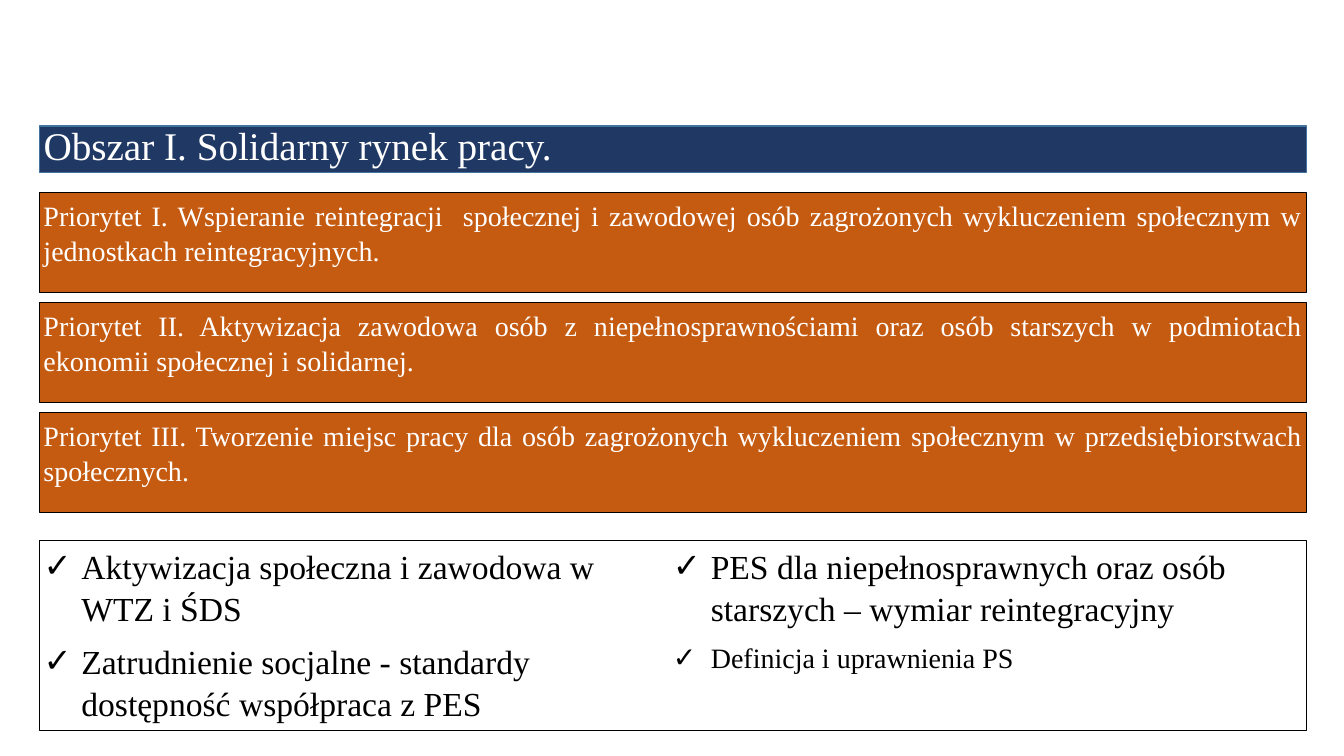
import pptx
import pptx.util
import pptx.dml.color
import pptx.enum.shapes
import pptx.enum.text
import pptx.oxml.ns
import lxml.etree

Pt = pptx.util.Pt
FONT = "Times New Roman"
LEFT, WIDTH = 28.2, 905
INSET = 2.9
INDENT = 27

AREA = "Obszar I. Solidarny rynek pracy."
PRIORITIES = [
    "Priorytet I. Wspieranie reintegracji  społecznej i zawodowej osób "
    "zagrożonych wykluczeniem społecznym w jednostkach reintegracyjnych.",
    "Priorytet II. Aktywizacja zawodowa osób z niepełnosprawnościami oraz "
    "osób starszych w podmiotach ekonomii społecznej i solidarnej.",
    "Priorytet III. Tworzenie miejsc pracy dla osób zagrożonych "
    "wykluczeniem społecznym w przedsiębiorstwach społecznych.",
]
ACTIONS = [
    ("Aktywizacja społeczna i zawodowa w WTZ i ŚDS", 24),
    ("Zatrudnienie socjalne - standardy dostępność współpraca z PES", 24),
    ("PES dla niepełnosprawnych oraz osób starszych – wymiar reintegracyjny", 24),
    ("Definicja i uprawnienia PS", 20),
]


def color(hex_value):
    return pptx.dml.color.RGBColor.from_string(hex_value)


def style_box(panel, box, fill, line, anchor):
    """Place a panel and set its fill, outline and text margins."""
    panel.left, panel.top, panel.width, panel.height = (Pt(v) for v in box)
    if fill:
        panel.fill.solid()
        panel.fill.fore_color.rgb = color(fill)
    else:
        panel.fill.background()
    panel.line.color.rgb = color(line)
    panel.line.width = Pt(1)
    frame = panel.text_frame
    frame.word_wrap = True
    frame.auto_size = pptx.enum.text.MSO_AUTO_SIZE.NONE
    frame.vertical_anchor = anchor
    frame.margin_left = frame.margin_right = Pt(INSET)
    frame.margin_top = frame.margin_bottom = Pt(INSET)
    return frame


def write(paragraph, text, size, text_color, align, spacing):
    paragraph.alignment = align
    paragraph.line_spacing = spacing
    paragraph.space_before = Pt(0)
    paragraph.space_after = Pt(8)
    run = paragraph.add_run()
    run.text = text
    run.font.name = FONT
    run.font.size = Pt(size)
    run.font.color.rgb = color(text_color)


def add_check_mark(paragraph):
    properties = paragraph._p.get_or_add_pPr()
    properties.set("marL", str(Pt(INDENT)))
    properties.set("indent", str(-Pt(INDENT)))
    bullet = lxml.etree.SubElement(properties, pptx.oxml.ns.qn("a:buChar"))
    bullet.set("char", "✓")


# Area heading
def build_heading(slide, box):
    frame = style_box(slide.shapes.title, box, "203864", "43739E",
                      pptx.enum.text.MSO_ANCHOR.BOTTOM)
    write(frame.paragraphs[0], AREA, 28, "FFFFFF",
          pptx.enum.text.PP_ALIGN.LEFT, 1.0)


# Stack of equal priority bars
def build_priorities(slide, box, gap=7.2):
    left, top, width, height = box
    bar_height = (height - gap * (len(PRIORITIES) - 1)) / len(PRIORITIES)
    for index, priority in enumerate(PRIORITIES):
        bar = slide.shapes.add_shape(
            pptx.enum.shapes.MSO_SHAPE.RECTANGLE, 0, 0, 0, 0)
        bar.shadow.inherit = False
        bar_top = top + index * (bar_height + gap)
        frame = style_box(bar, (left, bar_top, width, bar_height), "C55A11",
                          "000000", pptx.enum.text.MSO_ANCHOR.TOP)
        write(frame.paragraphs[0], priority, 20, "FFFFFF",
              pptx.enum.text.PP_ALIGN.JUSTIFY, 1.05)


# Two-column list of actions
def build_actions(slide, box):
    frame = style_box(slide.placeholders[1], box, None, "000000",
                      pptx.enum.text.MSO_ANCHOR.TOP)
    frame._txBody.bodyPr.set("numCol", "2")
    frame._txBody.bodyPr.set("spcCol", "0")
    for index, (action, size) in enumerate(ACTIONS):
        paragraph = frame.add_paragraph() if index else frame.paragraphs[0]
        add_check_mark(paragraph)
        write(paragraph, action, size, "000000",
              pptx.enum.text.PP_ALIGN.LEFT, 1.04)


def main():
    deck = pptx.Presentation()
    deck.slide_width, deck.slide_height = Pt(960), Pt(540)
    slide = deck.slides.add_slide(deck.slide_layouts[1])
    build_heading(slide, (LEFT, 90, WIDTH, 33.2))
    build_priorities(slide, (LEFT, 137.6, WIDTH, 228.3))
    build_actions(slide, (LEFT, 386, WIDTH, 136))
    deck.save("out.pptx")


if __name__ == "__main__":
    main()
